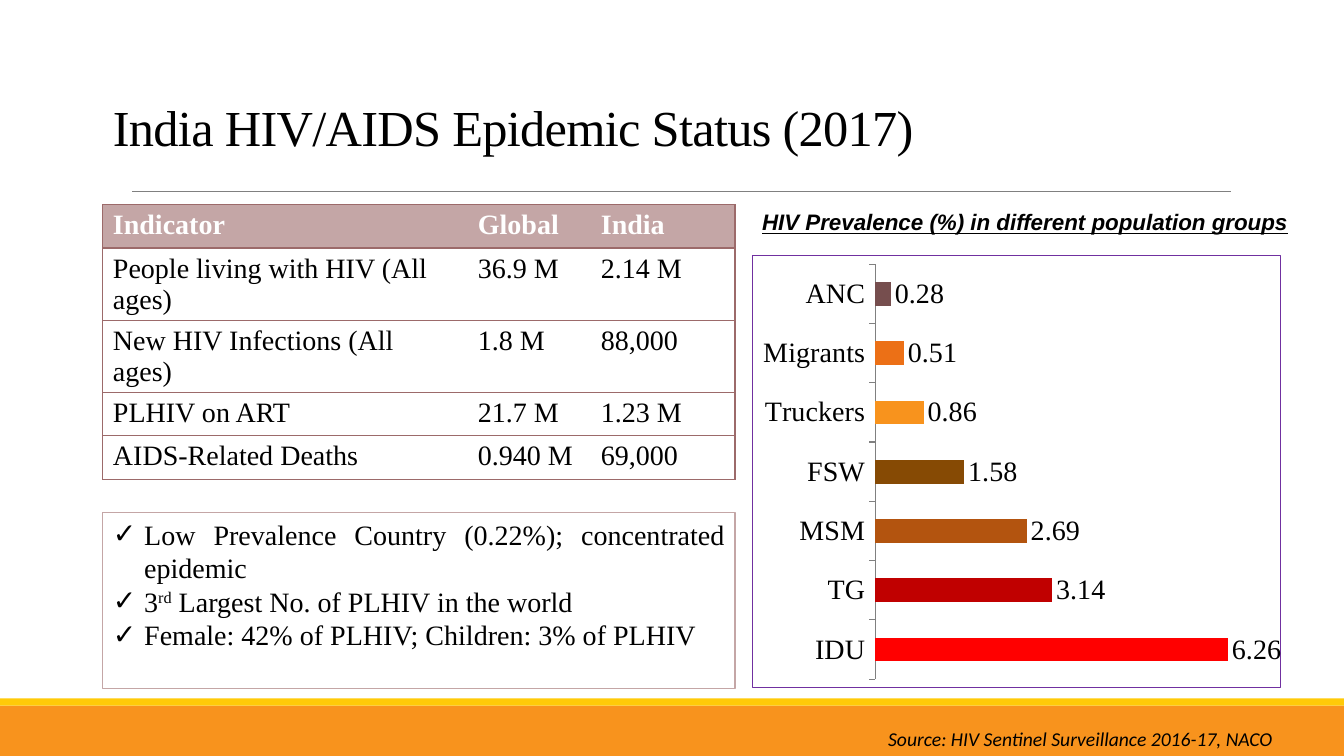
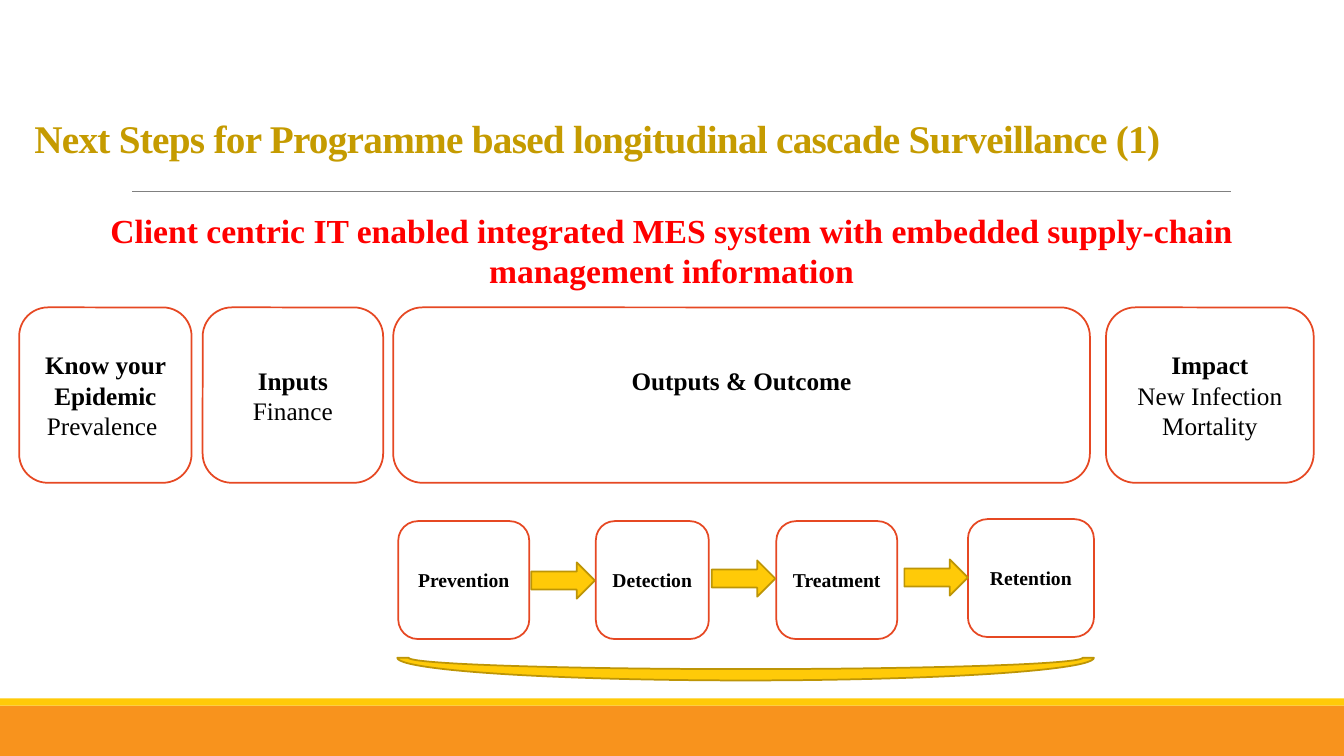
from lxml.etree import SubElement
from pptx import Presentation
from pptx.chart.data import CategoryChartData
from pptx.dml.color import RGBColor
from pptx.enum.chart import XL_CHART_TYPE, XL_LABEL_POSITION, XL_TICK_MARK
from pptx.enum.shapes import MSO_CONNECTOR, MSO_SHAPE
from pptx.enum.text import MSO_ANCHOR, MSO_AUTO_SIZE, PP_ALIGN
from pptx.oxml import parse_xml
from pptx.oxml.ns import nsdecls, qn
from pptx.util import Inches, Pt

BLACK = RGBColor(0x00, 0x00, 0x00)
WHITE = RGBColor(0xFF, 0xFF, 0xFF)
RED = RGBColor(0xFF, 0x00, 0x00)
GREY = RGBColor(0x80, 0x80, 0x80)
ORANGE = RGBColor(0xF8, 0x93, 0x1D)
YELLOW = RGBColor(0xFF, 0xCA, 0x08)
GOLD = RGBColor(0xC5, 0x9B, 0x00)
DARK_GOLD = RGBColor(0xBD, 0x95, 0x06)
VERMILION = RGBColor(0xE6, 0x48, 0x23)
ROSE = RGBColor(0xC4, 0xA6, 0xA6)
DARK_ROSE = RGBColor(0x9C, 0x6A, 0x6A)
PURPLE = RGBColor(0x70, 0x30, 0xA0)
CRIMSON = RGBColor(0xC0, 0x00, 0x00)
RUST = RGBColor(0xB3, 0x54, 0x0F)
BROWN = RGBColor(0x86, 0x4A, 0x04)
TANGERINE = RGBColor(0xEC, 0x70, 0x16)
MAROON = RGBColor(0x76, 0x4E, 0x4E)

SERIF = "Times New Roman"
BODY = dict(name=SERIF, size=Pt(20), bold=False, color=BLACK)
HEAD = dict(BODY, bold=True, color=WHITE)
STAGE = dict(BODY, size=Pt(18))
STEP = dict(BODY, size=Pt(14), bold=True)
BANNER = dict(BODY, size=Pt(24), bold=True, color=RED)
CAPTION = dict(name="Arial", size=Pt(16), bold=True, italic=True,
               underline=True, color=BLACK)
SOURCE = dict(name="Calibri", size=Pt(14), italic=True, color=BLACK)


def format_font(font, fmt):
    for key, value in fmt.items():
        if key == "color":
            font.color.rgb = value
        else:
            setattr(font, key, value)


def add_run(p, text, fmt):
    r = p.add_run()
    r.text = text
    format_font(r.font, fmt)
    return r


def inches(box):
    return [Inches(v) for v in box]


def place(sp, box):
    for key, value in zip(("left", "top", "width", "height"), inches(box)):
        setattr(sp, key, value)


def add_shape(s, kind, box, fill, line=None, weight=1.25):
    sp = s.shapes.add_shape(kind, *inches(box))
    sp.shadow.inherit = False
    sp.fill.solid()
    sp.fill.fore_color.rgb = fill
    if line is None:
        sp.line.fill.background()
    else:
        sp.line.color.rgb = line
        sp.line.width = Pt(weight)
    return sp


def add_text(s, box, text, fmt, align=PP_ALIGN.LEFT):
    tf = s.shapes.add_textbox(*inches(box)).text_frame
    tf.word_wrap = True
    p = tf.paragraphs[0]
    p.alignment = align
    add_run(p, text, fmt)


def add_slide(prs, layout, title, box, fmt):
    s = prs.slides.add_slide(prs.slide_layouts[layout])
    add_shape(s, MSO_SHAPE.RECTANGLE, (0, 7, 13.33, 0.5), ORANGE)
    add_shape(s, MSO_SHAPE.RECTANGLE, (0, 6.93, 13.33, 0.07), YELLOW)
    rule = s.shapes.add_connector(MSO_CONNECTOR.STRAIGHT,
                                  *inches((1.31, 1.9, 12.21, 1.9)))
    rule.line.color.rgb = GREY
    rule.line.width = Pt(0.5)
    SubElement(rule._element.spPr, qn("a:effectLst"))
    place(s.shapes.title, box)
    tf = s.shapes.title.text_frame
    tf.auto_size = MSO_AUTO_SIZE.NONE
    tf.vertical_anchor = MSO_ANCHOR.BOTTOM
    p = tf.paragraphs[0]
    p.alignment = PP_ALIGN.LEFT
    p.line_spacing = 0.85
    r = add_run(p, title, dict(BODY, **fmt))
    r.font._element.set("spc", "-50")
    return s


def add_border(cell, side, color):
    ln = SubElement(cell._tc.get_or_add_tcPr(), qn(f"a:ln{side}"), w="12700")
    if color is None:
        SubElement(ln, qn("a:noFill"))
    else:
        fill = SubElement(ln, qn("a:solidFill"))
        SubElement(fill, qn("a:srgbClr"), val=str(color))


def indicator_table(s, box):
    rows = [
        ("Indicator", "Global", "India"),
        ("People living with HIV (All ages)", "36.9 M", "2.14 M"),
        ("New HIV Infections (All ages)", "1.8 M", "88,000"),
        ("PLHIV on ART", "21.7 M", "1.23 M"),
        ("AIDS-Related Deaths", "0.940 M", "69,000"),
    ]
    widths = (3.62, 1.22, 1.43)
    heights = (0.43, 0.71, 0.71, 0.43, 0.43)
    table = s.shapes.add_table(len(rows), len(widths), *inches(box)).table
    table.first_row = table.horz_banding = False
    for col, width in zip(table.columns, widths):
        col.width = Inches(width)
    for i, (row, height) in enumerate(zip(rows, heights)):
        table.rows[i].height = Inches(height)
        for j, text in enumerate(row):
            cell = table.cell(i, j)
            add_run(cell.text_frame.paragraphs[0], text, BODY if i else HEAD)
            add_border(cell, "L", None if j else DARK_ROSE)
            add_border(cell, "R", DARK_ROSE if j == len(row) - 1 else None)
            add_border(cell, "T", DARK_ROSE)
            add_border(cell, "B", DARK_ROSE)
            if i:
                cell.fill.background()
            else:
                cell.fill.solid()
                cell.fill.fore_color.rgb = ROSE


def key_facts(s, box):
    facts = [
        [("Low Prevalence Country (0.22%); concentrated epidemic", False)],
        [("3", False), ("rd", True),
         (" Largest No. of PLHIV in the world", False)],
        [("Female: 42% of PLHIV; Children: 3% of PLHIV", False)],
    ]
    sp = s.placeholders[1]
    place(sp, box)
    sp.line.color.rgb = ROSE
    sp.line.width = Pt(0.75)
    tf = sp.text_frame
    tf.auto_size = MSO_AUTO_SIZE.NONE
    for i, fact in enumerate(facts):
        p = tf.add_paragraph() if i else tf.paragraphs[0]
        p.alignment = PP_ALIGN.JUSTIFY
        p.space_before = Pt(0)
        pPr = p._p.get_or_add_pPr()
        pPr.set("marL", str(Inches(0.31)))
        pPr.set("indent", str(-Inches(0.31)))
        SubElement(pPr, qn("a:buChar"), char="✓")
        for text, raised in fact:
            r = add_run(p, text, BODY)
            if raised:
                r.font._element.set("baseline", "30000")


def prevalence_chart(s, box):
    groups = [
        ("IDU", 6.26, RED), ("TG", 3.14, CRIMSON), ("MSM", 2.69, RUST),
        ("FSW", 1.58, BROWN), ("Truckers", 0.86, ORANGE),
        ("Migrants", 0.51, TANGERINE), ("ANC", 0.28, MAROON),
    ]
    data = CategoryChartData()
    data.categories = [name for name, _, _ in groups]
    data.add_series("Series 1", [value for _, value, _ in groups])
    chart = s.shapes.add_chart(XL_CHART_TYPE.BAR_CLUSTERED, *inches(box),
                               data).chart
    chart.has_legend = chart.has_title = False
    format_font(chart.font, BODY)
    chart.font._element.getparent().getparent().getparent().addprevious(parse_xml(
        f'<c:spPr {nsdecls("c", "a")}><a:noFill/><a:ln w="9525"><a:solidFill>'
        f'<a:srgbClr val="{PURPLE}"/></a:solidFill></a:ln></c:spPr>'))
    axis = chart.value_axis
    axis.visible = axis.has_major_gridlines = False
    axis.minimum_scale, axis.maximum_scale = 0, 7
    axis = chart.category_axis
    axis.major_tick_mark = XL_TICK_MARK.OUTSIDE
    axis.format.line.color.rgb = GREY
    plot = chart.plots[0]
    plot.gap_width = 150
    plot.vary_by_categories = False
    plot.has_data_labels = True
    labels = plot.data_labels
    labels.show_value = True
    labels.position = XL_LABEL_POSITION.OUTSIDE_END
    format_font(labels.font, BODY)
    for i, (_, _, color) in enumerate(groups):
        fill = plot.series[0].points[i].format.fill
        fill.solid()
        fill.fore_color.rgb = color


def rounded_box(s, box, lines, bottom=0.05):
    sp = add_shape(s, MSO_SHAPE.ROUNDED_RECTANGLE, box, WHITE, VERMILION)
    tf = sp.text_frame
    tf.word_wrap = True
    tf.vertical_anchor = MSO_ANCHOR.MIDDLE
    tf.margin_bottom = Inches(bottom)
    for i, (text, fmt) in enumerate(lines):
        p = tf.add_paragraph() if i else tf.paragraphs[0]
        p.alignment = PP_ALIGN.CENTER
        add_run(p, text, fmt)


def stage_row(s, box):
    stages = [
        (0, 1.71, 0.05, "Know your Epidemic", ["Prevalence "]),
        (1.82, 1.79, 0.05, "Inputs", ["Finance"]),
        (3.71, 6.91, 0.34, "Outputs & Outcome", []),
        (10.78, 2.06, 0.05, "Impact", ["New Infection", "Mortality"]),
    ]
    x, y, _, h = box
    for dx, w, bottom, head, items in stages:
        lines = [(head, dict(STAGE, bold=True))]
        lines += [(item, STAGE) for item in items]
        rounded_box(s, (x + dx, y, w, h), lines, bottom)


def cascade(s, box):
    steps = [
        (0.01, 0.02, 1.3, "Prevention"), (1.97, 0.02, 1.12, "Detection"),
        (3.76, 0.02, 1.2, "Treatment"), (5.66, 0, 1.25, "Retention"),
    ]
    x, y, w, h = box
    for dx, dy, width, text in steps:
        rounded_box(s, (x + dx, y + dy, width, 1.17), [(text, STEP)])
    for dx, dy in ((1.33, 0.43), (3.12, 0.41), (5.03, 0.4)):
        add_shape(s, MSO_SHAPE.RIGHT_ARROW, (x + dx, y + dy, 0.63, 0.36),
                  YELLOW, DARK_GOLD)
    arc = add_shape(s, MSO_SHAPE.BLOCK_ARC, (x, y + h - 0.45, w, 0.45),
                    YELLOW, DARK_GOLD)
    arc.rotation = 180


def status_slide(prs):
    s = add_slide(prs, 1, "India HIV/AIDS Epidemic Status (2017)",
                  (1.02, 1.03, 11.95, 0.58), dict(size=Pt(36)))
    indicator_table(s, (1.02, 2.03, 6.27, 2.71))
    key_facts(s, (1.02, 5.08, 6.27, 1.75))
    prevalence_chart(s, (7.46, 2.53, 5.25, 4.3))
    add_text(s, (8.71, 7.16, 4.39, 0.34),
             "Source: HIV Sentinel Surveillance 2016-17, NACO", SOURCE)
    add_text(s, (7.46, 2.02, 5.64, 0.37),
             "HIV Prevalence (%) in different population groups", CAPTION)


def next_steps_slide(prs):
    s = add_slide(
        prs, 5,
        "Next Steps for Programme based longitudinal cascade Surveillance (1)",
        (0.24, 0.75, 12.55, 0.9), dict(size=Pt(28), bold=True, color=GOLD))
    add_text(s, (0.24, 2.03, 12.84, 0.91),
             "Client centric IT enabled integrated MES system with embedded "
             "supply-chain management information", BANNER, PP_ALIGN.CENTER)
    stage_row(s, (0.19, 3.05, 12.84, 1.74))
    cascade(s, (3.94, 5.15, 6.91, 1.6))


def main():
    prs = Presentation()
    prs.slide_width, prs.slide_height = Inches(13.33), Inches(7.5)
    status_slide(prs)
    next_steps_slide(prs)
    prs.save("out.pptx")


if __name__ == "__main__":
    main()
